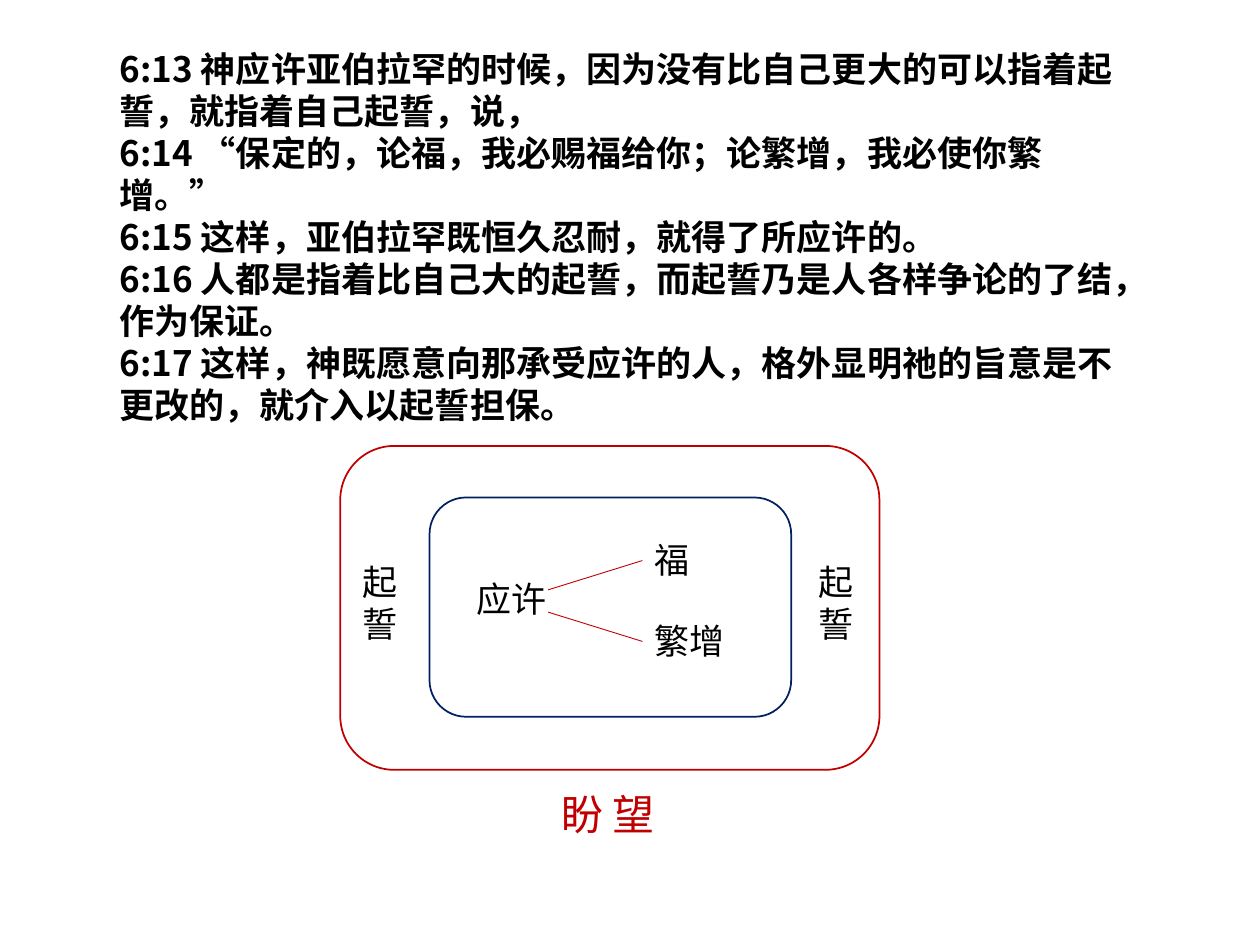
"""Build the slide with five verses above a diagram of nested rounded frames."""
from lxml.etree import SubElement
from pptx import Presentation
from pptx.dml.color import RGBColor
from pptx.enum.lang import MSO_LANGUAGE_ID as LANG
from pptx.enum.shapes import MSO_CONNECTOR as CONN, MSO_SHAPE as SHAPE
from pptx.enum.text import MSO_AUTO_SIZE as AUTO
from pptx.oxml.ns import qn
from pptx.util import Cm, Pt

COLORS = {"black": "000000", "red": "C00000", "navy": "002060"}
FONT = "Noto Sans CJK SC"

VERSES = [
    "6:13 神应许亚伯拉罕的时候，因为没有比自己更大的可以指着起誓，就指着自己起誓，说，",
    "6:14 “保定的，论福，我必赐福给你；论繁增，我必使你繁增。”",
    "6:15 这样，亚伯拉罕既恒久忍耐，就得了所应许的。",
    "6:16 人都是指着比自己大的起誓，而起誓乃是人各样争论的了结，作为保证。",
    "6:17 这样，神既愿意向那承受应许的人，格外显明祂的旨意是不更改的，就介入以起誓担保。",
]


def add_text(s, lines, box, wrap=True, color="black", size=20, bold=False):
    sp = s.shapes.add_textbox(*map(Cm, box))
    tf = sp.text_frame
    tf.word_wrap = wrap
    tf.auto_size = AUTO.SHAPE_TO_FIT_TEXT
    formats = {"name": FONT, "size": Pt(size), "bold": bold,
               "language_id": LANG.SIMPLIFIED_CHINESE}
    for i, line in enumerate(lines):
        p = tf.paragraphs[0] if i == 0 else tf.add_paragraph()
        r = p.add_run()
        r.text = line
        for name, value in formats.items():
            setattr(r.font, name, value)
        r.font.color.rgb = RGBColor.from_string(COLORS[color])
        SubElement(r._r.get_or_add_rPr(), qn("a:ea"), typeface=FONT)
    return sp


def set_line(sp, color, width):
    sp.line.color.rgb = RGBColor.from_string(COLORS[color])
    sp.line.width = Pt(width)


prs = Presentation()
prs.slide_width, prs.slide_height = Cm(25.4), Cm(19.05)
s = prs.slides.add_slide(prs.slide_layouts[6])

add_text(s, VERSES, (2.16, 0.84, 21.08, 7.09), bold=True)
add_text(s, ["应许"], (9.35, 11.51, 3.05, 1.12))
blessing = add_text(s, ["福"], (12.95, 10.74, 1.22, 1.12), wrap=False)
increase = add_text(s, ["繁增"], (12.95, 12.37, 1.93, 1.12), wrap=False)
add_text(s, ["盼 望"], (11.07, 15.77, 2.46, 1.27), wrap=False, color="red", size=24)
for left in (16.26, 7.06):
    add_text(s, ["起誓"], (left, 11.18, 1.09, 1.96))

for color, box in (("navy", (8.66, 10.03, 7.29, 4.42)),
                   ("red", (6.86, 8.99, 10.87, 6.53))):
    sp = s.shapes.add_shape(SHAPE.ROUNDED_RECTANGLE, *map(Cm, box))
    sp.shadow.inherit = False
    sp.fill.background()
    set_line(sp, color, 1)

for target, y in ((blessing, 11.89), (increase, 12.34)):
    line = s.shapes.add_connector(CONN.STRAIGHT, Cm(11.05), Cm(y), Cm(12.95), Cm(y))
    line.end_connect(target, 1)
    set_line(line, "red", 0.5)
    SubElement(line._element.spPr, qn("a:effectLst"))

prs.save("out.pptx")
